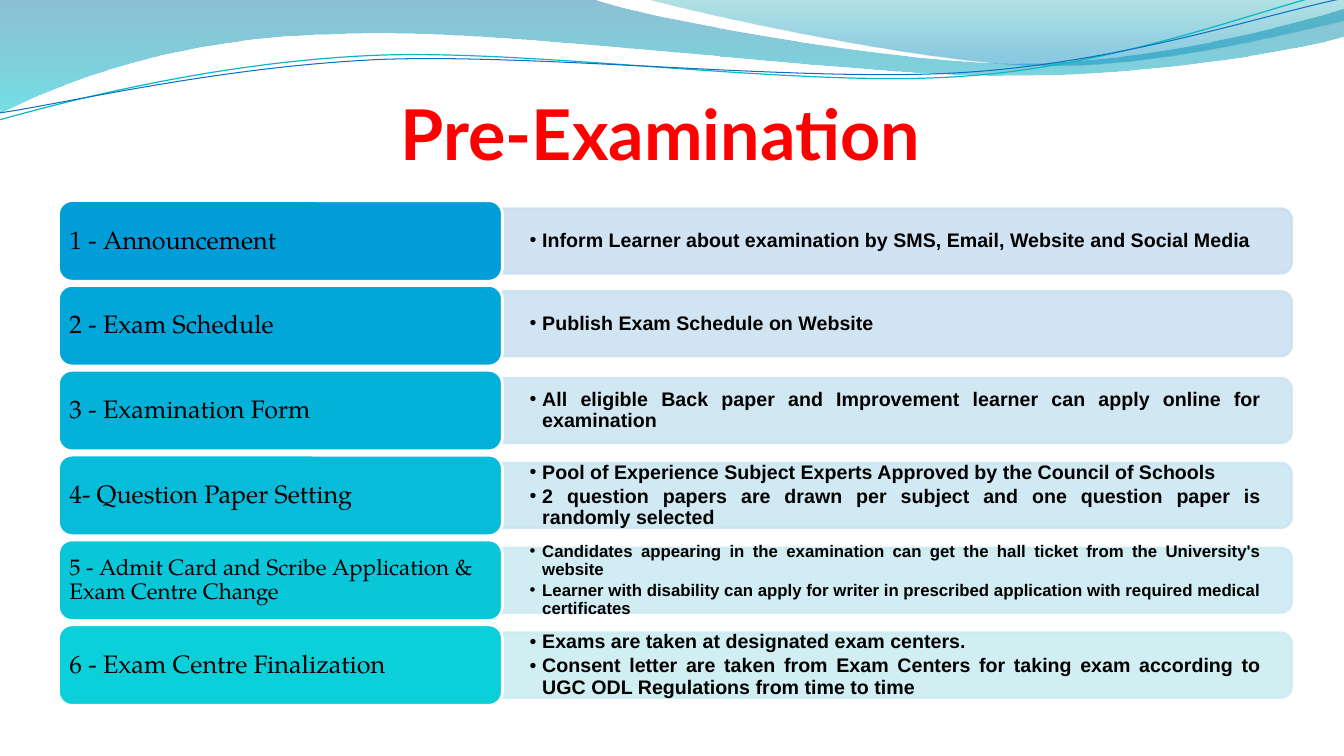
from lxml.etree import SubElement
from pptx import Presentation
from pptx.dml.color import RGBColor
from pptx.enum.shapes import MSO_SHAPE as Shape
from pptx.enum.text import MSO_ANCHOR as Anchor, PP_ALIGN as Align
from pptx.oxml.ns import qn
from pptx.util import Inches, Pt

COLORS = {
    "title": "FF0000", "text": "000000", "white": "FFFFFF",
    "label first": "009DD9", "label last": "0BD0D9",
    "bar first": "CCDFF1", "bar last": "CCEDF1",
    "wave blue": "0074A1", "wave cyan": "00C6CF",
    "crest teal": "00A1A9", "crest blue": "008BBF",
    "line teal": "0AB8BF", "line blue": "0F6FC6",
}

# Grid of the list: two columns as shares of its width, six even rows
WIDTH, HEIGHT = 13.33, 7.5
LEFT, TOP, LIST_WIDTH, LIST_HEIGHT = 0.58, 1.99, 12.23, 5.05
LABEL_SHARE, BAR_SHARE = 0.36, 0.64
LABEL_ROWS, BAR_ROWS, TEXT_ROWS = 0.95, 0.76, 0.69
BAR_END = 0.03  # keeps the detail text clear of the round corners

# Label, label size, details, detail size, shift of the detail bar
STEPS = [
    ("1 - Announcement", 18,
     ["Inform Learner about examination by SMS, Email, Website and Social Media"], 14, 0),
    ("2 - Exam Schedule", 18, ["Publish Exam Schedule on Website"], 14, -0.02),
    ("3 - Examination Form", 18,
     ["All eligible Back paper and Improvement learner can apply online for examination"], 14, 0),
    ("4- Question Paper Setting", 18,
     ["Pool of Experience Subject Experts Approved by the Council of Schools",
      "2 question papers are drawn per subject and one question paper is randomly selected"], 14, 0),
    ("5 - Admit Card and Scribe Application & Exam Centre Change", 16,
     ["Candidates appearing in the examination can get the hall ticket from the University's website",
      "Learner with disability can apply for writer in prescribed application "
      "with required medical certificates"], 12, 0),
    ("6 - Exam Centre Finalization", 18,
     ["Exams are taken at designated exam centers.",
      "Consent letter are taken from Exam Centers for taking exam according to "
      "UGC ODL Regulations from time to time"], 14, 0),
]
ROW = LIST_HEIGHT / len(STEPS)

# Outlines: a start point, then lines (2 numbers) or Bezier curves (6 numbers)
WAVE = [(0, 0), (5.87, -0.01), (6.34, 0.17, 8.85, 0.63, 10.11, 0.63),
        (11.38, 0.63, 12.78, 0.26, 13.33, 0.09), (13.35, 0.36),
        (13.11, 0.44, 11.6, 0.76, 9.94, 0.75), (8.29, 0.75, 5.09, 0.28, 3.43, 0.34),
        (1.72, 0.36, 0.61, 0.83, -0.01, 1.13), (0, 0)]
CREST = [(6.39, -0.01), (6.79, 0.11, 9.09, 0.62, 10.25, 0.65),
         (11.41, 0.69, 12.82, 0.32, 13.33, 0.21), (13.33, 0), (6.39, -0.01)]
TEAL_LINE = [(-0.01, 1.19), (0.64, 1.01, 2.11, 0.62, 3.69, 0.55),
             (5.27, 0.48, 7.9, 0.87, 9.5, 0.76), (11.1, 0.66, 12.52, 0.08, 13.31, -0.1)]
BLUE_LINE = [(0, 1.12), (0.63, 1.03, 2.18, 0.66, 3.78, 0.59),
             (5.37, 0.53, 7.96, 0.82, 9.55, 0.72), (11.15, 0.62, 12.55, 0.14, 13.34, -0.02)]


def color(name):
    return RGBColor.from_string(COLORS[name])


def blend(first, last, share):
    return RGBColor(*(round(a + (b - a) * share) for a, b in zip(color(first), color(last))))


def set_opacity(shape, *percents):
    """Give the shape's colours, in order, their opacity."""
    for tag, percent in zip(shape._element.spPr.iter(qn("a:srgbClr")), percents):
        SubElement(tag, qn("a:alpha"), val=str(percent * 1000))


def add_outline(page, outline, closed):
    """Draw through all points, then merge each curve's three lines into one Bezier."""
    points = [(Inches(x), Inches(y)) for segment in outline
              for x, y in zip(segment[::2], segment[1::2])]
    builder = page.shapes.build_freeform(*points[0], scale=1.0)
    builder.add_line_segments(points[1:], close=closed)
    shape = builder.convert_to_shape()
    shape.shadow.inherit = False
    lines = iter(list(shape._element.spPr.iter(qn("a:lnTo"))))
    for segment in outline[1:]:
        first = next(lines)
        if len(segment) == 6:
            first.tag = qn("a:cubicBezTo")
            for line in (next(lines), next(lines)):
                first.append(line[0])
                line.getparent().remove(line)
    return shape


def add_wave(page, outline, stops):
    wave = add_outline(page, outline, True)
    wave.line.fill.background()
    wave.fill.gradient()
    wave.fill.gradient_angle = 270
    for stop, (name, position, _) in zip(wave.fill.gradient_stops, stops):
        stop.color.rgb = color(name)
        stop.position = position
    set_opacity(wave, *(opacity for _, _, opacity in stops))


def add_wave_line(page, outline, name, weight):
    curve = add_outline(page, outline, False)
    curve.fill.background()
    curve.line.color.rgb = color(name)
    curve.line.width = Pt(weight)


def add_block(page, kind, left, top, width, height, fill, line):
    block = page.shapes.add_shape(kind, *map(Inches, (left, top, width, height)))
    block.shadow.inherit = False
    block.fill.solid()
    block.fill.fore_color.rgb = fill
    block.line.color.rgb = line
    block.line.width = Pt(2)
    return block


def add_bullet(para):
    props = para._p.get_or_add_pPr()
    props.set("marL", str(Pt(9)))
    props.set("indent", str(-Pt(9)))
    SubElement(props, qn("a:buFont"), typeface="Arial")
    SubElement(props, qn("a:buChar"), char="•")


def write(shape, texts, font, size, align, name="text", bold=False, anchor=Anchor.MIDDLE,
          insets=(0, 0), spacing=0.9, after=0, bullet=False):
    frame = shape.text_frame
    frame.word_wrap = True
    frame.vertical_anchor = anchor
    frame.margin_left = frame.margin_right = Inches(insets[0])
    frame.margin_top = frame.margin_bottom = Inches(insets[1])
    for index, text in enumerate(texts):
        para = frame.add_paragraph() if index else frame.paragraphs[0]
        para.text = text
        para.alignment = align
        para.line_spacing = spacing
        para.space_after = Pt(after)
        if bullet:
            add_bullet(para)
        para.font.name, para.font.size, para.font.bold = font, Pt(size), bold
        para.font.color.rgb = color(name)


def add_step(page, index, label, label_size, details, detail_size, shift):
    share = index / (len(STEPS) - 1)
    label_top = TOP + index * ROW
    label_width, bar_width = LIST_WIDTH * LABEL_SHARE, LIST_WIDTH * BAR_SHARE
    middle = label_top + ROW * LABEL_ROWS / 2 + shift
    bar_left = LEFT + label_width

    # Detail bar: a tall shape turned so that its round corners face right
    bar_height = ROW * BAR_ROWS
    tint = blend("bar first", "bar last", share)
    bar = add_block(page, Shape.ROUND_2_SAME_RECTANGLE, bar_left + (bar_width - bar_height) / 2,
                    middle - bar_width / 2, bar_height, bar_width, tint, tint)
    bar.rotation = 90
    set_opacity(bar, 90, 90)

    text_height = ROW * TEXT_ROWS
    box = page.shapes.add_textbox(*map(Inches, (bar_left, middle - text_height / 2,
                                                bar_width - BAR_END, text_height)))
    write(box, details, "Arial", detail_size, Align.JUSTIFY, bold=True,
          insets=(0.27, 0.14), after=detail_size * 0.15, bullet=True)

    tab = add_block(page, Shape.ROUNDED_RECTANGLE, LEFT, label_top, label_width,
                    ROW * LABEL_ROWS, blend("label first", "label last", share), color("white"))
    write(tab, [label], "TeX Gyre Pagella", label_size, Align.LEFT, insets=(0.07, 0.04))


def main():
    deck = Presentation()
    deck.slide_width, deck.slide_height = Inches(WIDTH), Inches(HEIGHT)
    page = deck.slides.add_slide(deck.slide_layouts[6])

    # Waves along the top
    add_wave(page, WAVE, [("wave blue", 0, 45), ("wave cyan", 1, 55)])
    add_wave(page, CREST, [("crest teal", 0, 30), ("crest blue", 0.8, 45)])
    add_wave_line(page, TEAL_LINE, "line teal", 0.85)
    add_wave_line(page, BLUE_LINE, "line blue", 0.75)

    # Title
    title = page.shapes.add_textbox(*map(Inches, (1.05, 0.5, 11, 1.23)))
    write(title, ["Pre-Examination"], "Lato", 50, Align.CENTER, "title", bold=True,
          anchor=Anchor.BOTTOM, spacing=1.0)

    # Steps
    for index, step in enumerate(STEPS):
        add_step(page, index, *step)

    deck.save("out.pptx")


if __name__ == "__main__":
    main()
